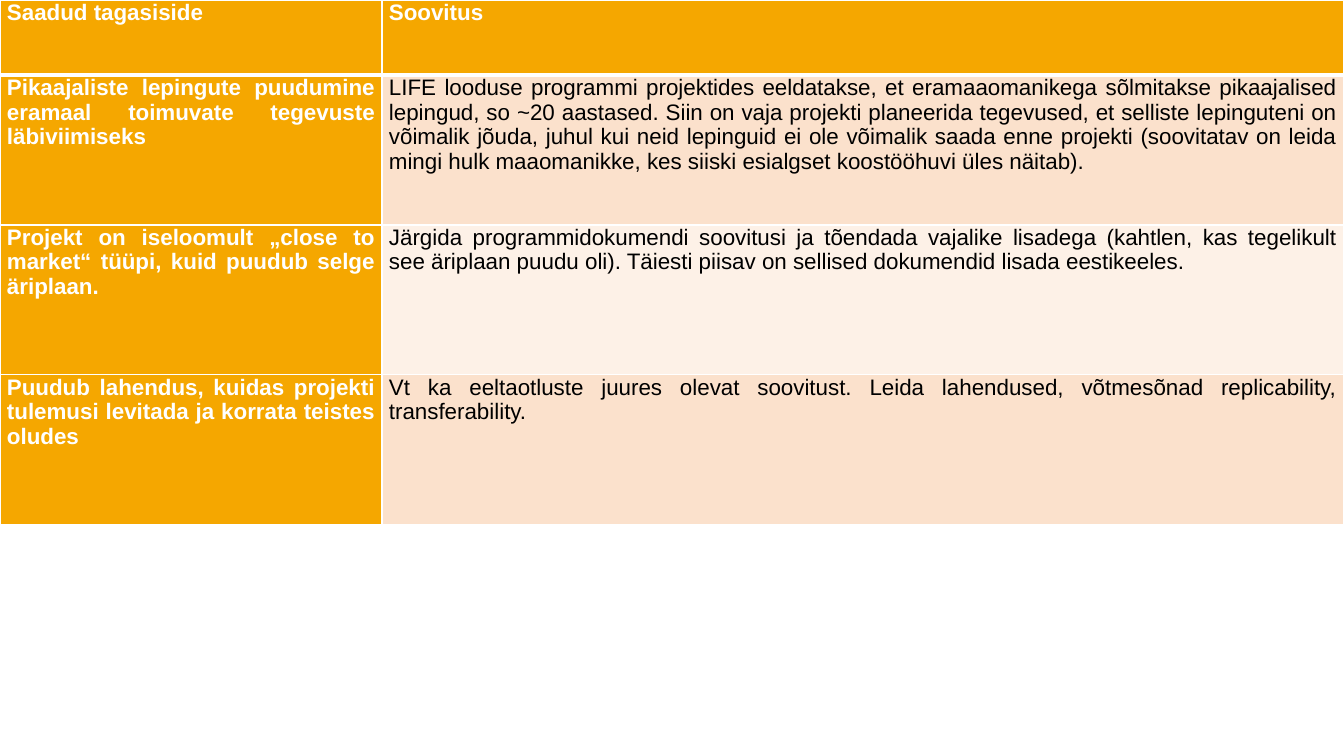
"""Build a slide with a table of feedback and recommendations."""
from dataclasses import dataclass

from lxml.etree import SubElement as Sub
from pptx import Presentation
from pptx.dml.color import RGBColor as Rgb
from pptx.enum.text import MSO_ANCHOR as Anchor, PP_ALIGN as Align
from pptx.oxml.ns import qn
from pptx.util import Pt

ROWS = [
    ("Saadud tagasiside", "Soovitus"),
    ("Pikaajaliste lepingute puudumine eramaal toimuvate tegevuste läbiviimiseks",
     "LIFE looduse programmi projektides eeldatakse, et eramaaomanikega sõlmitakse "
     "pikaajalised lepingud, so ~20 aastased. Siin on vaja projekti planeerida tegevused, "
     "et selliste lepinguteni on võimalik jõuda, juhul kui neid lepinguid ei ole võimalik "
     "saada enne projekti (soovitatav on leida mingi hulk maaomanikke, kes siiski "
     "esialgset koostööhuvi üles näitab)."),
    ("Projekt on iseloomult „close to market“ tüüpi, kuid puudub selge äriplaan.",
     "Järgida programmidokumendi soovitusi ja tõendada vajalike lisadega (kahtlen, kas "
     "tegelikult see äriplaan puudu oli). Täiesti piisav on sellised dokumendid lisada "
     "eestikeeles."),
    ("Puudub lahendus, kuidas projekti tulemusi levitada ja korrata teistes oludes",
     "Vt ka eeltaotluste juures olevat soovitust. Leida lahendused, võtmesõnad "
     "replicability, transferability."),
]
WIDE, HIGH = 1344, 756
COLS = (382, 962)
HEAD, BODY = 75, 150
PAD = 7


@dataclass(frozen=True)
class Theme:
    """Hold the colours, font and sizes."""
    font: str = "Arial"
    size: int = 16
    gap: int = 12
    accent: str = "F5A700"
    bands: tuple = ("FDF1E7", "FBE1CC")
    light: str = "FFFFFF"
    dark: str = "000000"
    thin: int = 1
    thick: int = 3


LOOK = Theme()


def px(n):
    """Turn pixels into EMU."""
    return round(n * 914400 / 100.8)


def edge(cell, side, width):
    """Draw one border of a cell."""
    line = Sub(cell._tc.get_or_add_tcPr(), qn(f"a:ln{side}"), w=str(Pt(width)))
    Sub(Sub(line, qn("a:solidFill")), qn("a:srgbClr"), val=LOOK.light)


def style(cell, row, col, text):
    """Fill a cell with its text, borders and colours."""
    head = row == 0
    bold = head or col == 0
    heavy = {0: "B", 1: "T"}.get(row)
    for side in "LRTB":
        edge(cell, side, LOOK.thick if side == heavy else LOOK.thin)
    cell.fill.solid()
    cell.fill.fore_color.rgb = Rgb.from_string(LOOK.accent if bold else LOOK.bands[row % 2])
    cell.margin_left = cell.margin_right = px(PAD)
    cell.margin_top = cell.margin_bottom = 0
    cell.vertical_anchor = Anchor.TOP
    cell.text = text
    para = cell.text_frame.paragraphs[0]
    para.alignment = Align.JUSTIFY
    if head:
        para.space_before = Pt(LOOK.gap)
    font = para.font
    font.name, font.size, font.bold = LOOK.font, Pt(LOOK.size), bold
    font.color.rgb = Rgb.from_string(LOOK.light if bold else LOOK.dark)


def main():
    """Build and save the slide."""
    deck = Presentation()
    deck.slide_width, deck.slide_height = px(WIDE), px(HIGH)
    slide = deck.slides.add_slide(deck.slide_layouts[6])
    high = HEAD + BODY * (len(ROWS) - 1)
    table = slide.shapes.add_table(
        len(ROWS), len(COLS), 0, 0, px(sum(COLS)), px(high)).table
    for col, width in enumerate(COLS):
        table.columns[col].width = px(width)
    for row, texts in enumerate(ROWS):
        table.rows[row].height = px(BODY if row else HEAD)
        for col, text in enumerate(texts):
            style(table.cell(row, col), row, col, text)
    deck.save("out.pptx")


if __name__ == "__main__":
    main()
